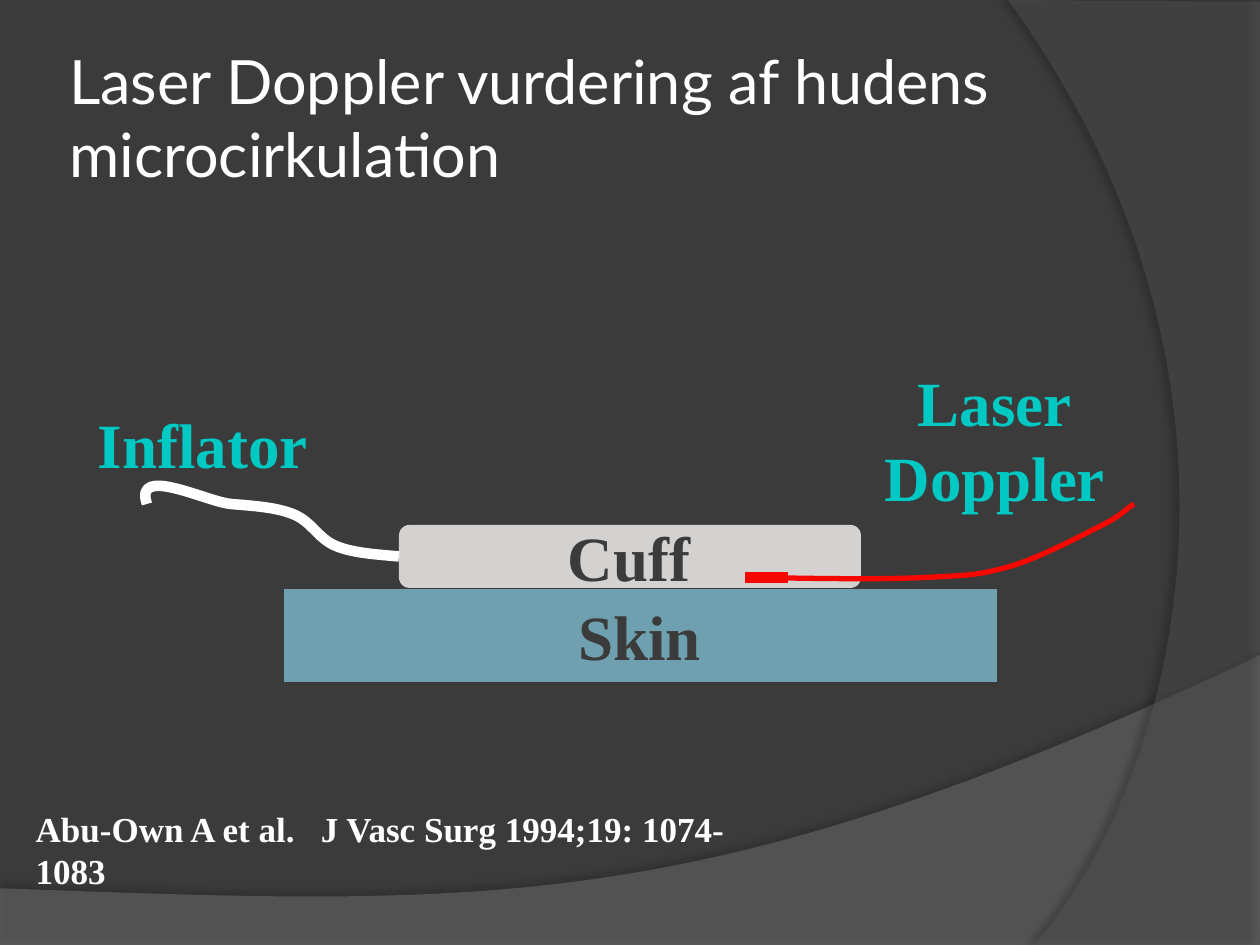
"""Build the slide on laser Doppler assessment of skin microcirculation."""
from dataclasses import dataclass

from lxml import etree
from pptx import Presentation
from pptx.dml.color import RGBColor
from pptx.enum.shapes import MSO_CONNECTOR, MSO_SHAPE
from pptx.enum.text import MSO_ANCHOR, MSO_AUTO_SIZE, PP_ALIGN
from pptx.oxml.ns import qn
from pptx.util import Inches, Pt

RECTANGLE, ROUNDED = MSO_SHAPE.RECTANGLE, MSO_SHAPE.ROUNDED_RECTANGLE
STRAIGHT = MSO_CONNECTOR.STRAIGHT
TOP, MIDDLE = MSO_ANCHOR.TOP, MSO_ANCHOR.MIDDLE
LEFT, CENTER = PP_ALIGN.LEFT, PP_ALIGN.CENTER
NO_AUTOFIT = MSO_AUTO_SIZE.NONE
TITLE_ONLY = 5
CELL = Inches(1) // 12
COLUMNS, ROWS = 120, 90


@dataclass(frozen=True)
class Theme:
    """Colours, fonts and type sizes of the slide."""
    page: str = "3B3B3B"
    light: str = "FFFFFF"
    wave: str = "7B7B7B"
    arc: str = "5A5A5A"
    shade: str = "000000"
    skin: str = "6EA0B0"
    cuff: str = "D4D2D0"
    fiber: str = "F60700"
    label: str = "00C8C3"
    title_font: str = "Lato"
    body_font: str = "Times New Roman"
    title_size: float = 34.9
    label_size: int = 36
    citation_size: int = 20


THEME = Theme()


def rgb(colour):
    """Turn a hex string into a colour."""
    return RGBColor.from_string(colour)


def cells(*counts):
    """Turn grid counts into lengths."""
    return [round(count * CELL) for count in counts]


def add_command(outline, name, points, origin):
    """Add one drawing command with points relative to the origin."""
    command = etree.SubElement(outline, qn(name))
    for point in points:
        x, y = cells(point[0] - origin[0], point[1] - origin[1])
        etree.SubElement(command, qn("a:pt"), x=str(x), y=str(y))


def add_outline(page, place, start, segments, closed):
    """Add a freeform of straight (one point) and curved (three points) segments."""
    left, top, width, height = place
    builder = page.shapes.build_freeform(*cells(left, top), scale=1.0)
    builder.add_line_segments([tuple(cells(left + width, top + height))], close=False)
    shape = builder.convert_to_shape()
    shape.shadow.inherit = False
    outline = shape._element.spPr.find(".//" + qn("a:path"))
    for command in list(outline):
        outline.remove(command)
    add_command(outline, "a:moveTo", [start], (left, top))
    for segment in segments:
        name = "a:cubicBezTo" if len(segment) == 3 else "a:lnTo"
        add_command(outline, name, segment, (left, top))
    if closed:
        etree.SubElement(outline, qn("a:close"))
    return shape


def add_sweep(page, place, start, segments, colour, opacity, shadow):
    """Add a translucent background area with a soft shadow."""
    shape = add_outline(page, place, start, segments, True)
    shape.fill.solid()
    shape.fill.fore_color.rgb = rgb(colour)
    shape.line.fill.background()
    properties = shape._element.spPr
    fill_colour = properties.find(qn("a:solidFill")).find(qn("a:srgbClr"))
    etree.SubElement(fill_colour, qn("a:alpha"), val=str(opacity * 1000))
    shadow_opacity, distance, degrees = shadow
    effect = etree.SubElement(
        properties.find(qn("a:effectLst")), qn("a:outerShdw"), blurRad=str(Pt(4)),
        dist=str(Pt(distance)), dir=str(degrees * 60000), rotWithShape="0")
    shade = etree.SubElement(effect, qn("a:srgbClr"), val=THEME.shade)
    etree.SubElement(shade, qn("a:alpha"), val=str(shadow_opacity * 1000))


def add_strand(page, place, start, segments, colour, width):
    """Add an open curved line."""
    shape = add_outline(page, place, start, segments, False)
    shape.fill.background()
    shape.line.color.rgb = rgb(colour)
    shape.line.width = Pt(width)


def add_block(page, kind, place, colour, border=None):
    """Add a filled block of the drawing."""
    shape = page.shapes.add_shape(kind, *cells(*place))
    shape.shadow.inherit = False
    shape.fill.solid()
    shape.fill.fore_color.rgb = rgb(colour)
    if border:
        shape.line.color.rgb = rgb(border)
        shape.line.width = Pt(0.75)
    else:
        shape.line.fill.background()


def add_probe(page, start, end, colour, width):
    """Add the straight probe tip."""
    line = page.shapes.add_connector(STRAIGHT, *cells(*start, *end))
    line.line.color.rgb = rgb(colour)
    line.line.width = Pt(width)
    etree.SubElement(line._element.spPr, qn("a:effectLst"))


def write(box, text, font, size, colour, bold, align, anchor, wrap):
    """Fill a text frame and format all its runs."""
    frame = box.text_frame
    frame.text = text
    frame.auto_size = NO_AUTOFIT
    frame.word_wrap = wrap
    frame.vertical_anchor = anchor
    frame.margin_left = frame.margin_right = Inches(0.05)
    frame.margin_top = frame.margin_bottom = Inches(0.05)
    for para in frame.paragraphs:
        para.alignment = align
        for span in para.runs:
            span.font.name = font
            span.font.size = Pt(size)
            span.font.bold = bold
            span.font.color.rgb = rgb(colour)


def add_label(page, text, place, colour, anchor=TOP):
    """Add a bold centred label."""
    box = page.shapes.add_textbox(*cells(*place))
    write(box, text, THEME.body_font, THEME.label_size, colour, True, CENTER, anchor, False)


def add_citation(page, text, place):
    """Add the literature reference."""
    box = page.shapes.add_textbox(*cells(*place))
    write(box, text, THEME.body_font, THEME.citation_size, THEME.light, True, LEFT, TOP, True)


def set_title(page, text, place):
    """Place and fill the title in front of the background."""
    title = page.shapes.title
    title.left, title.top, title.width, title.height = cells(*place)
    write(title, text, THEME.title_font, THEME.title_size, THEME.light, False,
          LEFT, MIDDLE, True)
    page.shapes._spTree.append(title._element)


def main():
    """Build and save the deck."""
    deck = Presentation()
    deck.slide_width, deck.slide_height = cells(COLUMNS, ROWS)
    page = deck.slides.add_slide(deck.slide_layouts[TITLE_ONLY])
    page.background.fill.solid()
    page.background.fill.fore_color.rgb = rgb(THEME.page)

    wave = [[(0, 90.1)], [(COLUMNS, 90.1)], [(COLUMNS, 62.4)],
            [(67.1, 87.5), (46.9, 86.3), (0, 84.6)]]
    arc = [[(COLUMNS, ROWS)], [(98.5, ROWS)],
           [(112.2, 74.3), (122.2, 36), (96, 0)], [(COLUMNS, 0.2)]]
    add_sweep(page, (0, 62.4, COLUMNS, 27.7), (0, 84.6), wave, THEME.wave, 45, (35, 3.5, 270))
    add_sweep(page, (96, 0, 24, ROWS), (COLUMNS, 0.2), arc, THEME.arc, 40, (45, 4, 180))
    set_title(page, "Laser Doppler vurdering af hudens microcirkulation", (6, 3.6, 98, 15))

    add_block(page, RECTANGLE, (27, 56, 68, 9), THEME.skin, THEME.page)
    add_label(page, "Skin", (54.4, 56.5, 13, 8), THEME.page, MIDDLE)
    add_block(page, ROUNDED, (38, 50, 44, 6), THEME.cuff)
    add_label(page, "Cuff", (53.4, 49, 13, 8), THEME.page, MIDDLE)

    tube = [[(35.9, 52.8), (33.7, 52.7), (32, 52)],
            [(30.3, 51.3), (29.7, 49.7), (28, 49)],
            [(26.3, 48.3), (24.3, 48.2), (22, 48)],
            [(19.7, 47.8), (12.7, 44.2), (14, 48)]]
    fiber = [[(78, 55.1), (84, 55.2), (88, 55)],
             [(92, 54.8), (93.1, 54.8), (96, 54)],
             [(98.9, 53.2), (103, 51), (105, 50)],
             [(107, 49), (107.3, 48.4), (108, 48)]]
    add_strand(page, (13.8, 46.2, 24.2, 6.8), (38, 53), tube, THEME.light, 6)
    add_strand(page, (72, 48, 36, 7.1), (72, 55), fiber, THEME.fiber, 3)
    add_probe(page, (71, 55), (75, 55), THEME.fiber, 6)

    add_label(page, "Inflator", (8.6, 38, 21.4, 8), THEME.label)
    add_label(page, "Laser\nDoppler", (83.6, 34, 22.3, 15), THEME.label)
    add_citation(page, "Abu-Own A et al.   J Vasc Surg 1994;19: 1074-1083",
                 (2.8, 76.3, 70.3, 5))
    deck.save("out.pptx")


if __name__ == "__main__":
    main()
